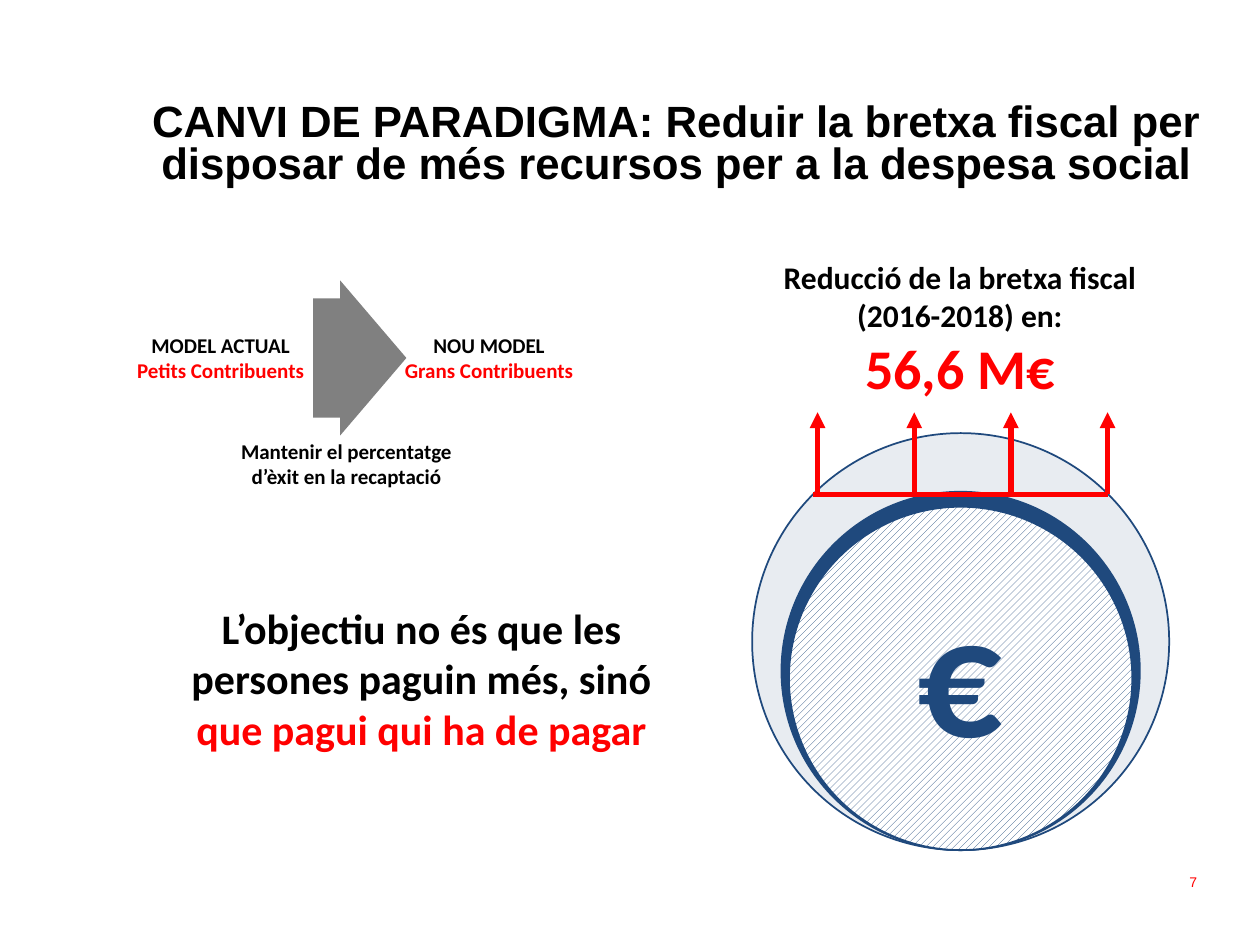
from lxml.etree import SubElement
from pptx import Presentation
from pptx.dml.color import RGBColor
from pptx.enum.dml import MSO_PATTERN
from pptx.enum.shapes import MSO_CONNECTOR, MSO_SHAPE
from pptx.enum.text import MSO_ANCHOR, MSO_AUTO_SIZE, PP_ALIGN
from pptx.oxml.ns import qn
from pptx.util import Pt

BLACK, RED, NAVY, GREY, WHITE = "000000", "FF0000", "1F497D", "808080", "FFFFFF"


def color(value):
    return RGBColor.from_string(value)


def write_text(shape, paragraphs, size=12, font="Calibri", bold=True, align=PP_ALIGN.CENTER,
               anchor=MSO_ANCHOR.TOP, wrap=True, line_spacing=None):
    """Fill a shape with paragraphs, each a list of (text, colour[, size]) runs."""
    frame = shape.text_frame
    frame.word_wrap = wrap
    frame.auto_size = MSO_AUTO_SIZE.NONE
    frame.vertical_anchor = anchor
    for index, runs in enumerate(paragraphs):
        paragraph = frame.add_paragraph() if index else frame.paragraphs[0]
        paragraph.alignment = align
        if line_spacing:
            paragraph.line_spacing = Pt(line_spacing)
        for text, run_color, *own_size in runs:
            run = paragraph.add_run()
            run.text = text
            run.font.name = font
            run.font.size = Pt(own_size[0] if own_size else size)
            run.font.bold = bold
            run.font.color.rgb = color(run_color)


def add_text(shapes, left, top, width, height, paragraphs, **text_format):
    box = shapes.add_textbox(Pt(left), Pt(top), Pt(width), Pt(height))
    write_text(box, paragraphs, **text_format)


def add_circle(shapes, left, top, diameter):
    circle = shapes.add_shape(MSO_SHAPE.OVAL, Pt(left), Pt(top), Pt(diameter), Pt(diameter))
    circle.shadow.inherit = False
    circle.line.color.rgb = color(NAVY)
    circle.line.width = Pt(1)
    return circle


def add_red_line(shapes, start, end, arrow=False):
    line = shapes.add_connector(MSO_CONNECTOR.STRAIGHT, *map(Pt, start + end))
    line.line.color.rgb = color(RED)
    line.line.width = Pt(3)
    if arrow:
        SubElement(line.line._get_or_add_ln(), qn("a:tailEnd"), type="triangle")
    SubElement(line._element.spPr, qn("a:effectLst"))


def place_title(slide, left, top, width, height):
    title = slide.shapes.title
    title.left, title.top, title.width, title.height = map(Pt, (left, top, width, height))
    text = ("CANVI DE PARADIGMA: Reduir la bretxa fiscal per disposar de més recursos "
            "per a la despesa social")
    write_text(title, [[(text, BLACK)]], size=25, font="Arial", line_spacing=24)


def add_model_change(slide, left, top):
    """Current model, arrow and new model, with the condition below."""
    shapes = slide.shapes
    models = [(0, "MODEL ACTUAL", "Petits Contribuents"),
              (153.4, "NOU MODEL", "Grans Contribuents")]
    for offset, model, taxpayers in models:
        add_text(shapes, left + offset, top + 8.6, 111, 36,
                 [[(model, BLACK)], [(taxpayers, RED)]], wrap=False)
    arrow = shapes.add_shape(MSO_SHAPE.DOWN_ARROW, Pt(left + 90.7), Pt(top), Pt(88.6), Pt(53.3))
    arrow.rotation = 270
    arrow.adjustments[0], arrow.adjustments[1] = 0.77, 0.71
    arrow.shadow.inherit = False
    arrow.fill.solid()
    arrow.fill.fore_color.rgb = color(GREY)
    arrow.line.fill.background()
    add_text(shapes, left + 59, top + 69.1, 136.8, 36,
             [[("Mantenir el percentatge d’èxit en la recaptació", BLACK)]])


def add_euro_circles(slide, left, top, diameter):
    """Nested circles around a euro sign, all resting on the same bottom."""
    shapes = slide.shapes.add_group_shape().shapes
    center, bottom = left + diameter / 2, top + diameter

    def add_nested(size):
        return add_circle(shapes, center - size / 2, bottom - size, size)

    outer = add_nested(diameter)
    outer.fill.solid()
    outer.fill.fore_color.rgb = color(NAVY)
    fill_color = outer._element.spPr.find(qn("a:solidFill"))[0]
    SubElement(fill_color, qn("a:alpha"), val="10000")

    middle = add_nested(204.8)
    middle.fill.solid()
    middle.fill.fore_color.rgb = color(NAVY)

    inner = add_nested(196.2)
    inner.fill.patterned()
    inner.fill.pattern = MSO_PATTERN.WIDE_UPWARD_DIAGONAL
    inner.fill.fore_color.rgb = color(NAVY)
    inner.fill.back_color.rgb = color(WHITE)

    add_text(shapes, center - 31.7, top + 74.1, 63.4, 123.8, [[("€", NAVY)]],
             size=96, align=PP_ALIGN.LEFT, wrap=False)


def add_rising_arrows(slide, left, top, width, height, count=4):
    shapes = slide.shapes.add_group_shape().shapes
    base = top + height
    add_red_line(shapes, (left - 2.5, base), (left + width, base))
    for index in range(count):
        x = left + index * width / (count - 1)
        add_red_line(shapes, (x, base), (x, top), arrow=True)


def main():
    presentation = Presentation()
    presentation.slide_width, presentation.slide_height = Pt(720), Pt(540)
    slide = presentation.slides.add_slide(presentation.slide_layouts[5])

    place_title(slide, 78.5, 56.2, 615.6, 55.4)
    add_text(slide.shapes, 523.4, 489.6, 167.8, 28.8, [[("7", RED)]], size=8, font="Arial",
             bold=False, align=PP_ALIGN.RIGHT, anchor=MSO_ANCHOR.MIDDLE)
    add_model_change(slide, 70.6, 177.9)
    add_text(slide.shapes, 87.8, 340.6, 306, 94.3,
             [[("L’objectiu no és que les persones paguin més, sinó ", BLACK),
               ("que pagui qui ha de pagar", RED)]], size=24)
    add_euro_circles(slide, 429.8, 247.5, 238.3)
    add_rising_arrows(slide, 467.2, 235.6, 165.7, 46.8)
    add_text(slide.shapes, 415.4, 144, 266.4, 90,
             [[("Reducció de la bretxa fiscal (2016-2018) en:", BLACK)],
              [("56,6 M€", RED, 32)]], size=18)

    presentation.save("out.pptx")


if __name__ == "__main__":
    main()
